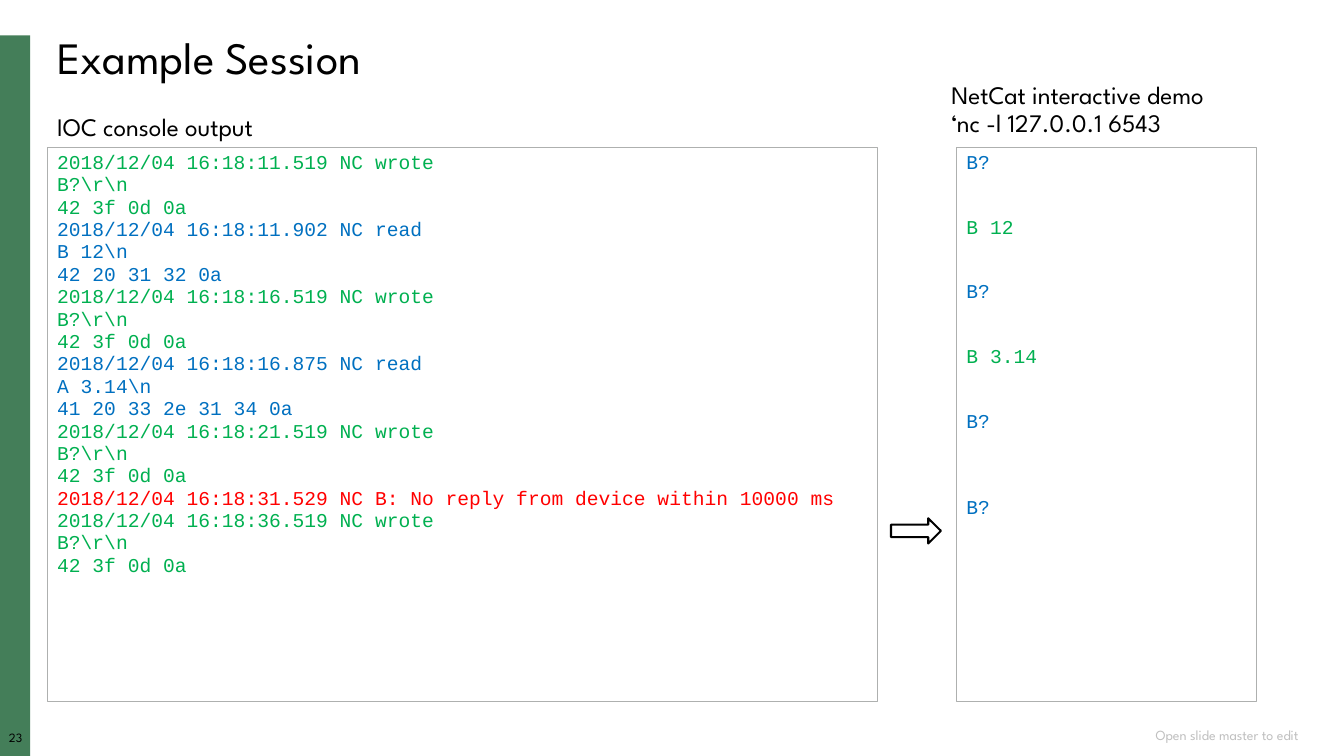
from dataclasses import dataclass

from pptx import Presentation
from pptx.dml.color import RGBColor
from pptx.enum import shapes, text
from pptx.util import Pt


@dataclass(frozen=True)
class Theme:
    """Colours, fonts and type sizes of the slide."""
    sans: str = "League Spartan"
    mono: str = "Courier New"
    black: str = "000000"
    bar: str = "447E59"
    frame: str = "AEB0AF"
    faint: str = "BFBFBF"
    green: str = "00B050"
    blue: str = "0070C0"
    red: str = "FF0000"
    title: float = 32
    label: float = 18
    code: float = 14
    foot: float = 10
    page: float = 9
    pitch: float = 0.9
    gap: float = 0.85


@dataclass(frozen=True)
class Box:
    """Place of an element in points."""
    x: float
    y: float
    w: float
    h: float


@dataclass(frozen=True)
class Line:
    """One line of text, its colour and the space above it."""
    words: str
    hue: str
    above: float = 0


@dataclass(frozen=True)
class Label:
    """Text set directly on the slide."""
    box: Box
    words: tuple[str, ...]
    size: float
    hue: str
    align: text.PP_ALIGN = text.PP_ALIGN.LEFT
    inset: bool = True


T = Theme()
ROW = T.code * 1.133 * T.pitch + T.gap

LABELS = [
    Label(Box(33.8, 21.6, 900, 42.5), ("Example Session",), T.title, T.black),
    Label(Box(33.8, 78.5, 187, 26.6), ("IOC console output",), T.label, T.black),
    Label(Box(672.5, 55.4, 237, 46.8),
          ("NetCat interactive demo", "‘nc -l 127.0.0.1 6543"), T.label, T.black),
    Label(Box(630.7, 518.4, 303.8, 14.4), ("Open slide master to edit",),
          T.foot, T.faint, text.PP_ALIGN.RIGHT),
    Label(Box(0, 521.3, 22.3, 12.2), ("23",), T.page, T.black,
          text.PP_ALIGN.CENTER, False),
]

LOG = [
    (T.green, ("2018/12/04 16:18:11.519 NC wrote", r"B?\r\n", "42 3f 0d 0a")),
    (T.blue, ("2018/12/04 16:18:11.902 NC read", r"B 12\n", "42 20 31 32 0a")),
    (T.green, ("2018/12/04 16:18:16.519 NC wrote", r"B?\r\n", "42 3f 0d 0a")),
    (T.blue, ("2018/12/04 16:18:16.875 NC read", r"A 3.14\n", "41 20 33 2e 31 34 0a")),
    (T.green, ("2018/12/04 16:18:21.519 NC wrote", r"B?\r\n", "42 3f 0d 0a")),
    (T.red, ("2018/12/04 16:18:31.529 NC B: No reply from device within 10000 ms",)),
    (T.green, ("2018/12/04 16:18:36.519 NC wrote", r"B?\r\n", "42 3f 0d 0a")),
]
DEMO = [("B?", T.blue, 0), ("B 12", T.green, 2), ("B?", T.blue, 2),
        ("B 3.14", T.green, 2), ("B?", T.blue, 2), ("B?", T.blue, 3)]


def write(frame, lines: list[Line], font: str, size: float,
          align: text.PP_ALIGN = text.PP_ALIGN.LEFT) -> None:
    """Fill a text frame with one paragraph per line."""
    frame.word_wrap = True
    for i, line in enumerate(lines):
        para = frame.paragraphs[0] if i == 0 else frame.add_paragraph()
        para.text = line.words
        para.alignment = align
        para.line_spacing = T.pitch
        if line.above:
            para.space_before = Pt(round(line.above, 2))
        para.font.name = font
        para.font.size = Pt(size)
        para.font.color.rgb = RGBColor.from_string(line.hue)


def form(slide, kind: shapes.MSO_SHAPE, box: Box, fill: str = "",
         edge: str = "", width: float = 0.75):
    """Draw a preset shape with an optional fill and outline."""
    shape = slide.shapes.add_shape(kind, Pt(box.x), Pt(box.y), Pt(box.w), Pt(box.h))
    shape.shadow.inherit = False
    if fill:
        shape.fill.solid()
        shape.fill.fore_color.rgb = RGBColor.from_string(fill)
    else:
        shape.fill.background()
    if edge:
        shape.line.color.rgb = RGBColor.from_string(edge)
        shape.line.width = Pt(width)
    else:
        shape.line.fill.background()
    return shape


def panel(slide, box: Box, lines: list[Line]) -> None:
    """Draw a framed panel of console text."""
    frame = form(slide, shapes.MSO_SHAPE.RECTANGLE, box, edge=T.frame).text_frame
    frame.vertical_anchor = text.MSO_ANCHOR.TOP
    write(frame, lines, T.mono, T.code)


def place(slide, label: Label) -> None:
    """Add a text label to the slide."""
    box = label.box
    frame = slide.shapes.add_textbox(Pt(box.x), Pt(box.y), Pt(box.w), Pt(box.h)).text_frame
    frame.vertical_anchor = text.MSO_ANCHOR.MIDDLE
    if not label.inset:
        frame.margin_left = frame.margin_right = 0
        frame.margin_top = frame.margin_bottom = 0
    write(frame, [Line(words, label.hue) for words in label.words],
          T.sans, label.size, label.align)


def main() -> None:
    """Build the slide and save it."""
    deck = Presentation()
    deck.slide_width, deck.slide_height = Pt(960), Pt(540)
    slide = deck.slides.add_slide(deck.slide_layouts[6])
    form(slide, shapes.MSO_SHAPE.RECTANGLE, Box(0, 25.2, 21.6, 514.8), T.bar)
    log = [Line(words, hue, T.gap) for hue, group in LOG for words in group]
    log[0] = Line(log[0].words, log[0].hue)
    demo = [Line(words, hue, skip * ROW + T.gap if skip else 0)
            for words, hue, skip in DEMO]
    panel(slide, Box(683.3, 105.4, 214.4, 395.4), demo)
    panel(slide, Box(33.8, 105.4, 593.3, 395.4), log)
    form(slide, shapes.MSO_SHAPE.RIGHT_ARROW, Box(636.5, 370.2, 35.6, 18),
         edge=T.black, width=1.5)
    for label in LABELS:
        place(slide, label)
    deck.save("out.pptx")


if __name__ == "__main__":
    main()
